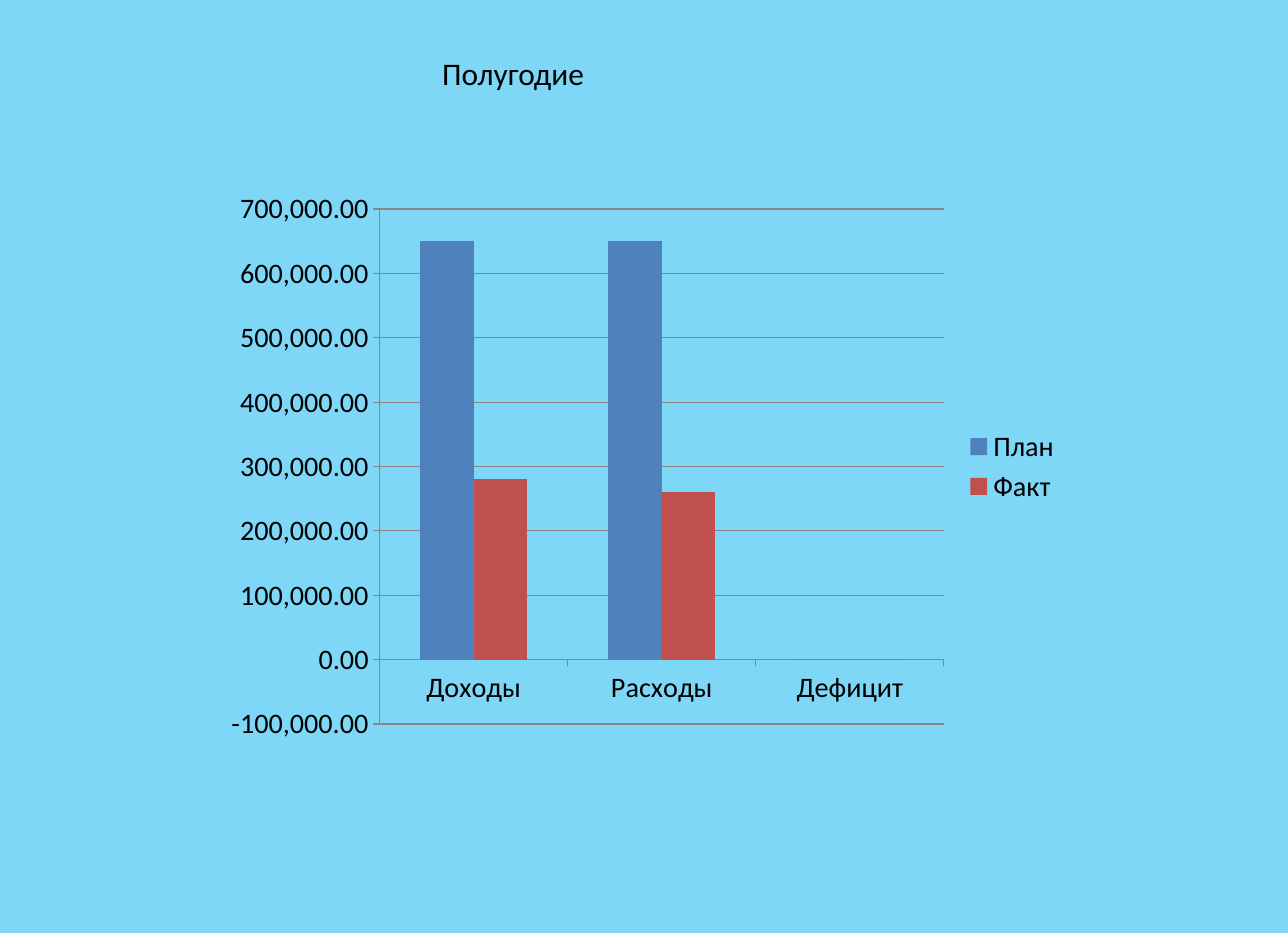
from dataclasses import dataclass

from pptx import Presentation
from pptx.chart.data import CategoryChartData as ChartData
from pptx.dml.color import RGBColor as RGB
from pptx.enum.chart import XL_CHART_TYPE as ChartType, XL_LEGEND_POSITION as LegendPos, XL_TICK_MARK as Tick
from pptx.enum.text import MSO_ANCHOR as Anchor, MSO_AUTO_SIZE as AutoSize, PP_ALIGN as Align
from pptx.util import Inches, Pt


@dataclass(frozen=True)
class Theme:
    font: str = "Calibri"
    background: str = "7FD7F7"
    text: str = "000000"
    rule: str = "868686"
    series: tuple = ("4F81BD", "C0504D")
    title_size: int = 20
    chart_size: int = 18


def set_attrs(obj, values):
    for name, value in values.items():
        setattr(obj, name, value)


class SlideBuilder:
    """Draws styled elements on the current slide."""

    def __init__(self, prs, theme):
        self.theme = theme
        self.s = prs.slides.add_slide(prs.slide_layouts[5])
        fill = self.s.background.fill
        fill.solid()
        fill.fore_color.rgb = RGB.from_string(theme.background)

    def style_font(self, font, size):
        set_attrs(font, {"name": self.theme.font, "size": Pt(size), "bold": False})
        font.color.rgb = RGB.from_string(self.theme.text)

    def style_line(self, line):
        line.color.rgb = RGB.from_string(self.theme.rule)
        line.width = Pt(0.75)

    def title(self, text, left, top, width, height):
        sp = self.s.shapes.title
        set_attrs(sp, {"left": Inches(left), "top": Inches(top),
                       "width": Inches(width), "height": Inches(height)})
        tf = sp.text_frame
        set_attrs(tf, {"word_wrap": False, "auto_size": AutoSize.SHAPE_TO_FIT_TEXT,
                       "vertical_anchor": Anchor.TOP})
        p = tf.paragraphs[0]
        p.alignment = Align.LEFT
        r = p.add_run()
        r.text = text
        self.style_font(r.font, self.theme.title_size)

    def column_chart(self, categories, series, scale, left, top, width, height):
        data = ChartData(number_format="#,##0.00")
        data.categories = categories
        for name, values in series.items():
            data.add_series(name, values)
        chart = self.s.shapes.add_chart(
            ChartType.COLUMN_CLUSTERED, Inches(left), Inches(top),
            Inches(width), Inches(height), data).chart
        set_attrs(chart, {"has_title": False, "has_legend": True})
        self.style_font(chart.font, self.theme.chart_size)
        set_attrs(chart.legend, {"position": LegendPos.RIGHT, "include_in_layout": False})

        plot = chart.plots[0]
        set_attrs(plot, {"vary_by_categories": False, "gap_width": 150, "overlap": 0})
        for item, color in zip(plot.series, self.theme.series):
            item.invert_if_negative = False
            item.format.fill.solid()
            item.format.fill.fore_color.rgb = RGB.from_string(color)

        for axis in (chart.category_axis, chart.value_axis):
            set_attrs(axis, {"major_tick_mark": Tick.OUTSIDE, "minor_tick_mark": Tick.NONE})
            self.style_line(axis.format.line)
        axis = chart.value_axis
        set_attrs(axis, dict(zip(("minimum_scale", "maximum_scale", "major_unit"), scale)))
        set_attrs(axis.tick_labels, {"number_format": "#,##0.00", "number_format_is_linked": False})
        axis.has_major_gridlines = True
        self.style_line(axis.major_gridlines.format.line)


def main():
    prs = Presentation()
    set_attrs(prs, {"slide_width": Inches(11.42), "slide_height": Inches(8.27)})
    slide = SlideBuilder(prs, Theme())
    slide.title("Полугодие", 3.82, 0.43, 1.47, 0.44)
    slide.column_chart(
        ("Доходы", "Расходы", "Дефицит"),
        {"План": (650000, 650000, 0), "Факт": (280000, 260000, 0)},
        (-100000, 700000, 100000), 1.9, 1.6, 7.61, 5.07)
    prs.save("out.pptx")


if __name__ == "__main__":
    main()
